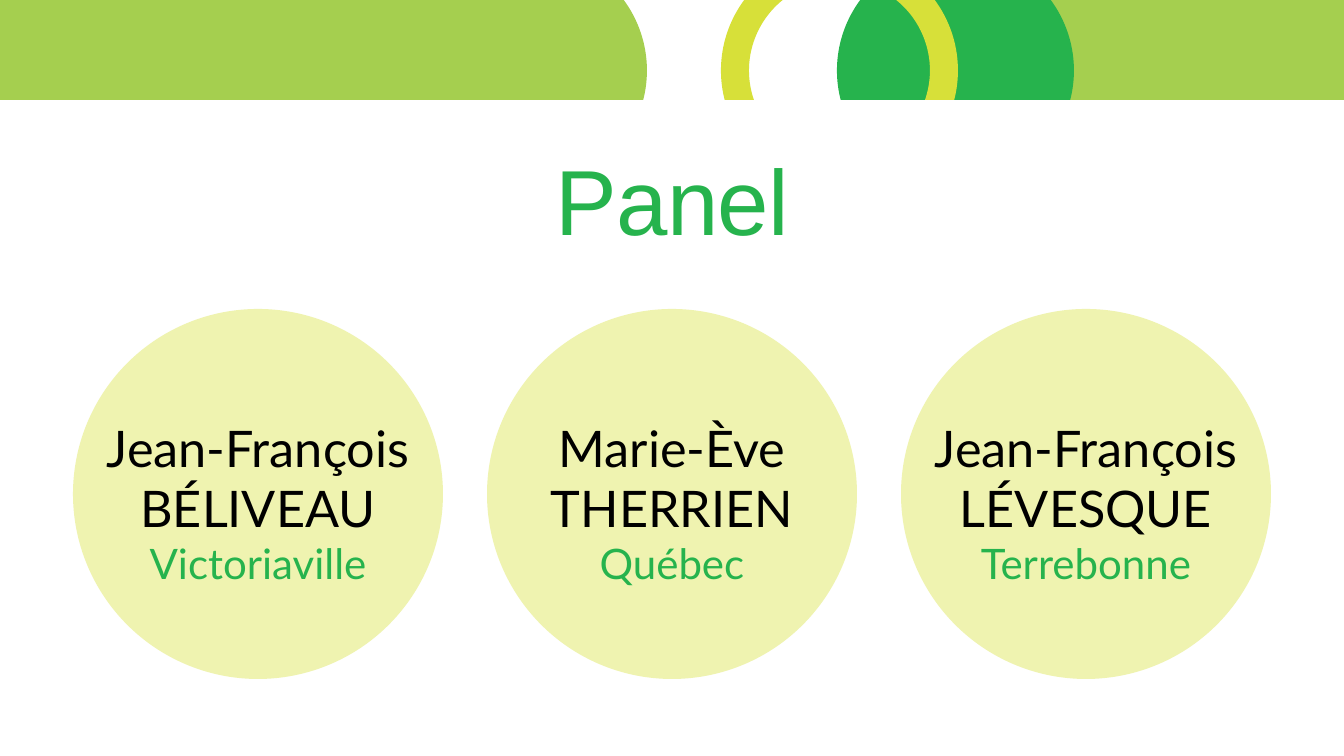
from pptx import Presentation
from pptx.dml.color import RGBColor
from pptx.enum.shapes import MSO_SHAPE
from pptx.enum.text import MSO_ANCHOR, PP_ALIGN
from pptx.util import Pt

PX = 914400 / 100.8
SLIDE_W, SLIDE_H = 1344, 756
WHITE, BLACK, LIME = "FFFFFF", "000000", "A5CF4F"
GREEN, YELLOW, PALE = "26B34D", "D7E039", "EFF3B0"

TITLE = "Panel"
PANELISTS = [
    ("Jean-François BÉLIVEAU", "Victoriaville"),
    ("Marie-Ève THERRIEN", "Québec"),
    ("Jean-François LÉVESQUE", "Terrebonne"),
]
BAND_H = 100
BANDS = [(0, 622), (930, SLIDE_W - 930)]
RINGS = [(424, None, LIME), (851, GREEN, GREEN), (735, None, YELLOW)]
RING_TOP, RING_SIZE, RING_LINE = -34, 209, 20
DISC_TOP, DISC_SIZE, DISC_GAP = 309, 370, 44
NAME_TOP, NAME_H = 412, 183


def px(*lengths):
    return [round(length * PX) for length in lengths]


def rgb(colour):
    return RGBColor.from_string(colour)


def add_shape(kind, box, fill=None, line=None):
    shape = slide.shapes.add_shape(kind, *px(*box))
    shape.shadow.inherit = False
    if fill:
        shape.fill.solid()
        shape.fill.fore_color.rgb = rgb(fill)
    else:
        shape.fill.background()
    if line:
        shape.line.color.rgb = rgb(line)
        shape.line.width = Pt(RING_LINE)
    else:
        shape.line.fill.background()


def add_text(box, lines):
    frame = slide.shapes.add_textbox(*px(*box)).text_frame
    frame.word_wrap = True
    frame.vertical_anchor = MSO_ANCHOR.TOP
    for i, (text, font, size, colour) in enumerate(lines):
        paragraph = frame.add_paragraph() if i else frame.paragraphs[0]
        paragraph.text = text
        paragraph.alignment = PP_ALIGN.CENTER
        paragraph.font.name = font
        paragraph.font.size = Pt(size)
        paragraph.font.color.rgb = rgb(colour)
    return frame


prs = Presentation()
prs.slide_width, prs.slide_height = px(SLIDE_W, SLIDE_H)
slide = prs.slides.add_slide(prs.slide_layouts[6])
slide.background.fill.solid()
slide.background.fill.fore_color.rgb = rgb(WHITE)

for left, width in BANDS:
    add_shape(MSO_SHAPE.RECTANGLE, (left, 0, width, BAND_H), LIME)
for left, fill, line in RINGS:
    add_shape(MSO_SHAPE.OVAL, (left, RING_TOP, RING_SIZE, RING_SIZE), fill, line)
add_shape(MSO_SHAPE.RECTANGLE, (0, BAND_H, SLIDE_W, 98), WHITE)

row_w = len(PANELISTS) * (DISC_SIZE + DISC_GAP) - DISC_GAP
row_left = (SLIDE_W - row_w) // 2
for i, (name, city) in enumerate(PANELISTS):
    left = row_left + i * (DISC_SIZE + DISC_GAP)
    add_shape(MSO_SHAPE.OVAL, (left, DISC_TOP, DISC_SIZE, DISC_SIZE), PALE)
    add_text((left, NAME_TOP, DISC_SIZE, NAME_H),
             [(name, "Lato", 36, BLACK), (city, "Lato", 30, GREEN)])

heading = add_text((336, 138, 673, 122), [(TITLE, "Arial", 66, GREEN)])
heading.paragraphs[0].runs[0].font._element.set("spc", "-50")

prs.save("out.pptx")
